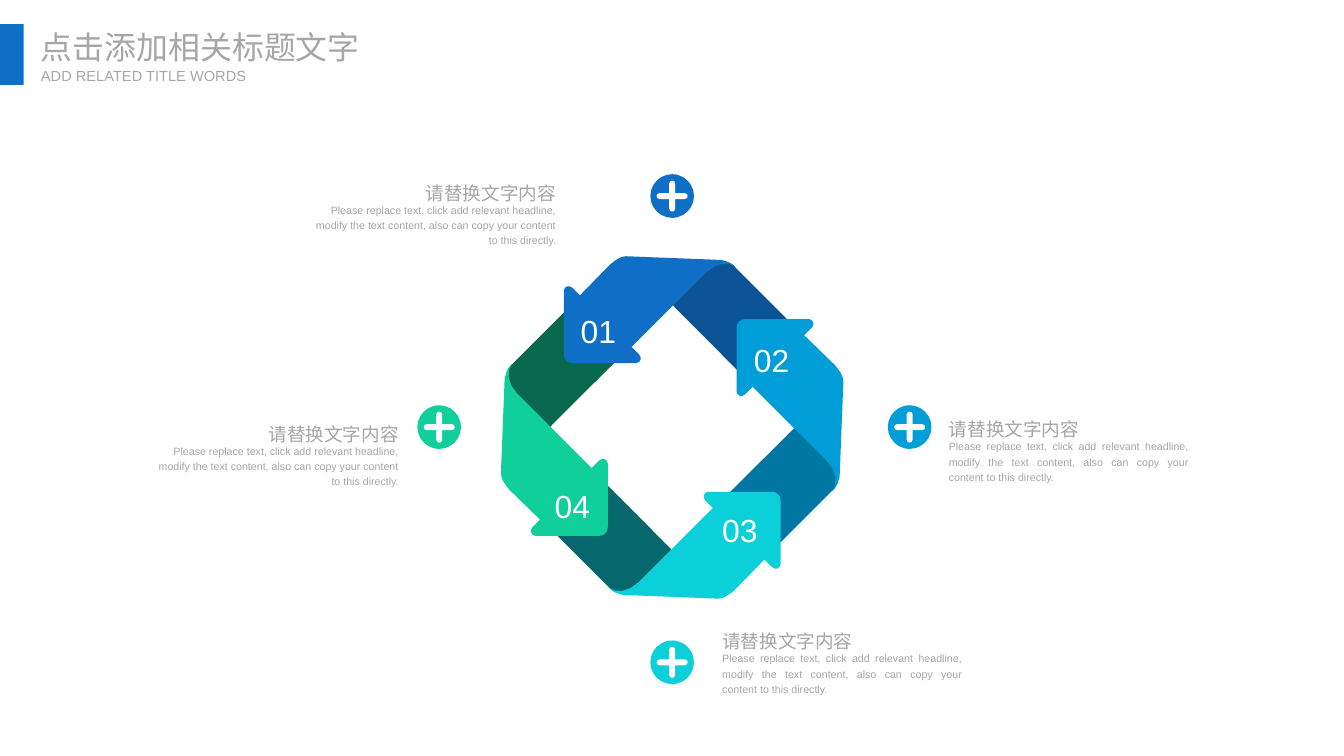
"""Builds a slide with a four-arrow ribbon wheel, plus badges and captions."""
from dataclasses import dataclass
from typing import NamedTuple

from pptx import Presentation
from pptx.dml.color import RGBColor
from pptx.enum.shapes import MSO_SHAPE
from pptx.enum.text import MSO_AUTO_SIZE, PP_ALIGN
from pptx.shapes.autoshape import Shape
from pptx.shapes.shapetree import GroupShapes, SlideShapes
from pptx.util import Cm, Pt

OVAL, RECTANGLE = MSO_SHAPE.OVAL, MSO_SHAPE.RECTANGLE
LEFT, RIGHT, JUSTIFY = PP_ALIGN.LEFT, PP_ALIGN.RIGHT, PP_ALIGN.JUSTIFY
GROW = MSO_AUTO_SIZE.SHAPE_TO_FIT_TEXT

Canvas = SlideShapes | GroupShapes


class Point(NamedTuple):
    x: float
    y: float

    def turned(self, quarters: int) -> "Point":
        """Rotate clockwise about the origin by quarter turns."""
        x, y = self
        for _ in range(quarters % 4):
            x, y = -y, x
        return Point(x, y)


class Frame(NamedTuple):
    left: float
    top: float
    width: float
    height: float


@dataclass(frozen=True)
class TextStyle:
    size: float
    color: str
    font: str = "Arial"
    spacing: float = 1.2
    inset: bool = True
    wrap: bool = False


@dataclass(frozen=True)
class Theme:
    accent: str = "0F6FC6"
    white: str = "FFFFFF"
    number: TextStyle = TextStyle(24, "FFFFFF")
    heading: TextStyle = TextStyle(14, "A6A6A6")
    body: TextStyle = TextStyle(8, "A6A6A6", wrap=True)
    title: TextStyle = TextStyle(24, "A6A6A6", "Noto Sans CJK SC", 1.0, False)
    subtitle: TextStyle = TextStyle(11, "A6A6A6", spacing=1.0, inset=False)


@dataclass(frozen=True)
class Step:
    number: str
    color: str
    band_color: str
    number_at: Point
    badge_at: Point
    caption_at: Point
    caption_width: float
    on_left: bool


THEME = Theme()
WHEEL_CENTER = Point(17.86, 11.36)
BADGE_SIZE = 1.16
CURVE_STEPS = 4
HEADING = "请替换文字内容"
BODY = ("Please replace text, click add relevant headline, modify the text content, "
        "also can copy your content to this directly.")

STEPS = [
    Step("01", "0F6FC6", "0B5394", Point(15.18, 7.95), Point(17.86, 5.21),
         Point(7.87, 5.22), 7.16, True),
    Step("02", "009DD9", "0076A3", Point(19.78, 8.73), Point(24.17, 11.35),
         Point(24.96, 11.51), 6.88, False),
    Step("03", "0BD0D9", "06686C", Point(18.94, 13.23), Point(17.86, 17.6),
         Point(18.94, 17.14), 6.88, False),
    Step("04", "10CF9B", "08684E", Point(14.49, 12.6), Point(11.67, 11.35),
         Point(3.69, 11.63), 7.16, True),
]

# Each segment is one point (a line) or three points (a cubic curve).
Segments = list[tuple[tuple[float, float], ...]]
BAND: Segments = [
    ((1.33, -4.42),), ((-1.18, -4.45),), ((2.48, -0.77),), ((3.82, -2.11),),
    ((1.61, -4.32),), ((1.49, -4.4), (1.38, -4.42), (1.33, -4.42)),
]
ARROW: Segments = [
    ((-1.23, -4.55),), ((-1.38, -4.55), (-1.54, -4.42), (-1.66, -4.32)),
    ((-2.45, -3.51),), ((-2.65, -3.71),),
    ((-2.73, -3.79), (-2.86, -3.76), (-2.88, -3.64)),
    ((-2.88, -1.94),), ((-2.88, -1.81), (-2.78, -1.71), (-2.65, -1.71)),
    ((-0.95, -1.71),), ((-0.83, -1.73), (-0.8, -1.86), (-0.88, -1.94)),
    ((-1.08, -2.14),), ((0.9, -4.12),),
    ((1.16, -4.37), (1.51, -4.42), (1.69, -4.25)),
    ((1.69, -4.25), (1.59, -4.4), (1.31, -4.45)),
]
PLUS_ARM: Segments = [
    ((-0.08, -0.33),), ((-0.08, -0.44), (0.08, -0.44), (0.08, -0.33)), ((0.08, -0.08),),
]


def trace(segments: Segments) -> list[Point]:
    """Turn lines and curves into a run of points."""
    points: list[Point] = []
    for segment in segments:
        if len(segment) == 1:
            points.append(Point(*segment[0]))
            continue
        controls = (points[-1], *segment)
        for step in range(1, CURVE_STEPS + 1):
            t = step / CURVE_STEPS
            weights = ((1 - t) ** 3, 3 * t * (1 - t) ** 2, 3 * t * t * (1 - t), t ** 3)
            points.append(Point(*(sum(w * c[axis] for w, c in zip(weights, controls))
                                  for axis in (0, 1))))
    return points


def paint(shape: Shape, color: str) -> None:
    """Give a shape a plain fill without line or shadow."""
    shape.shadow.inherit = False
    shape.fill.solid()
    shape.fill.fore_color.rgb = RGBColor.from_string(color)
    shape.line.fill.background()


def add_shape(canvas: Canvas, kind: MSO_SHAPE, frame: Frame, color: str) -> None:
    """Draw a filled preset shape."""
    paint(canvas.add_shape(kind, *map(Cm, frame)), color)


def add_outline(canvas: Canvas, points: list[Point], center: Point, color: str) -> None:
    """Draw a closed outline placed around a centre."""
    corners = [(Cm(center.x + x), Cm(center.y + y)) for x, y in points]
    builder = canvas.build_freeform(*corners[0])
    builder.add_line_segments(corners[1:], close=True)
    paint(builder.convert_to_shape(), color)


def add_text(canvas: Canvas, text: str, frame: Frame, style: TextStyle,
             align: PP_ALIGN = LEFT) -> None:
    """Write one styled paragraph in a text box."""
    box = canvas.add_textbox(*map(Cm, frame)).text_frame
    box_format = {"word_wrap": style.wrap, "auto_size": GROW}
    if not style.inset:
        box_format |= {f"margin_{side}": 0 for side in ("left", "top", "right", "bottom")}
    para = box.paragraphs[0]
    span = para.add_run()
    span.text = text
    span.font.color.rgb = RGBColor.from_string(style.color)
    formats = (
        (box, box_format),
        (para, {"alignment": align, "line_spacing": style.spacing}),
        (span.font, {"size": Pt(style.size), "name": style.font}),
    )
    for target, values in formats:
        for name, value in values.items():
            setattr(target, name, value)


def add_badge(canvas: Canvas, step: Step) -> None:
    """Draw a round badge with a plus sign."""
    badge = canvas.add_group_shape().shapes
    x, y = step.badge_at
    half = BADGE_SIZE / 2
    add_shape(badge, OVAL, Frame(x - half, y - half, BADGE_SIZE, BADGE_SIZE), step.color)
    plus = [point.turned(turn) for turn in range(4) for point in trace(PLUS_ARM)]
    add_outline(badge, plus, step.badge_at, THEME.white)


def add_wheel(canvas: Canvas) -> None:
    """Draw the folded ribbon wheel, bands below arrows."""
    wheel = canvas.add_group_shape().shapes
    for segments, field in ((BAND, "band_color"), (ARROW, "color")):
        for turn, step in enumerate(STEPS):
            points = [point.turned(turn) for point in trace(segments)]
            add_outline(wheel, points, WHEEL_CENTER, getattr(step, field))
    for step in STEPS:
        add_text(wheel, step.number, Frame(*step.number_at, 1.47, 1.37), THEME.number)


def add_caption(canvas: Canvas, step: Step) -> None:
    """Write the heading and body of one step."""
    (left, top), width, heading_width = step.caption_at, step.caption_width, 4.01
    heading_left = left + width - heading_width if step.on_left else left
    add_text(canvas, BODY, Frame(left, top, width, 1.5), THEME.body,
             RIGHT if step.on_left else JUSTIFY)
    add_text(canvas, HEADING, Frame(heading_left, top - 0.64, heading_width, 0.91),
             THEME.heading, RIGHT if step.on_left else LEFT)


def main() -> None:
    """Build and save the deck."""
    deck = Presentation()
    deck.slide_width, deck.slide_height = Cm(35.71), Cm(20.09)
    page = deck.slides.add_slide(deck.slide_layouts[6]).shapes
    for step in STEPS:
        add_badge(page, step)
    add_wheel(page)
    for step in STEPS:
        add_caption(page, step)
    add_shape(page, RECTANGLE, Frame(0, 0.64, 0.63, 1.62), THEME.accent)
    add_text(page, "点击添加相关标题文字", Frame(1.09, 0.74, 8.56, 1.02), THEME.title)
    add_text(page, "ADD RELATED TITLE WORDS", Frame(1.09, 1.78, 5.54, 0.48), THEME.subtitle)
    deck.save("out.pptx")


if __name__ == "__main__":
    main()
